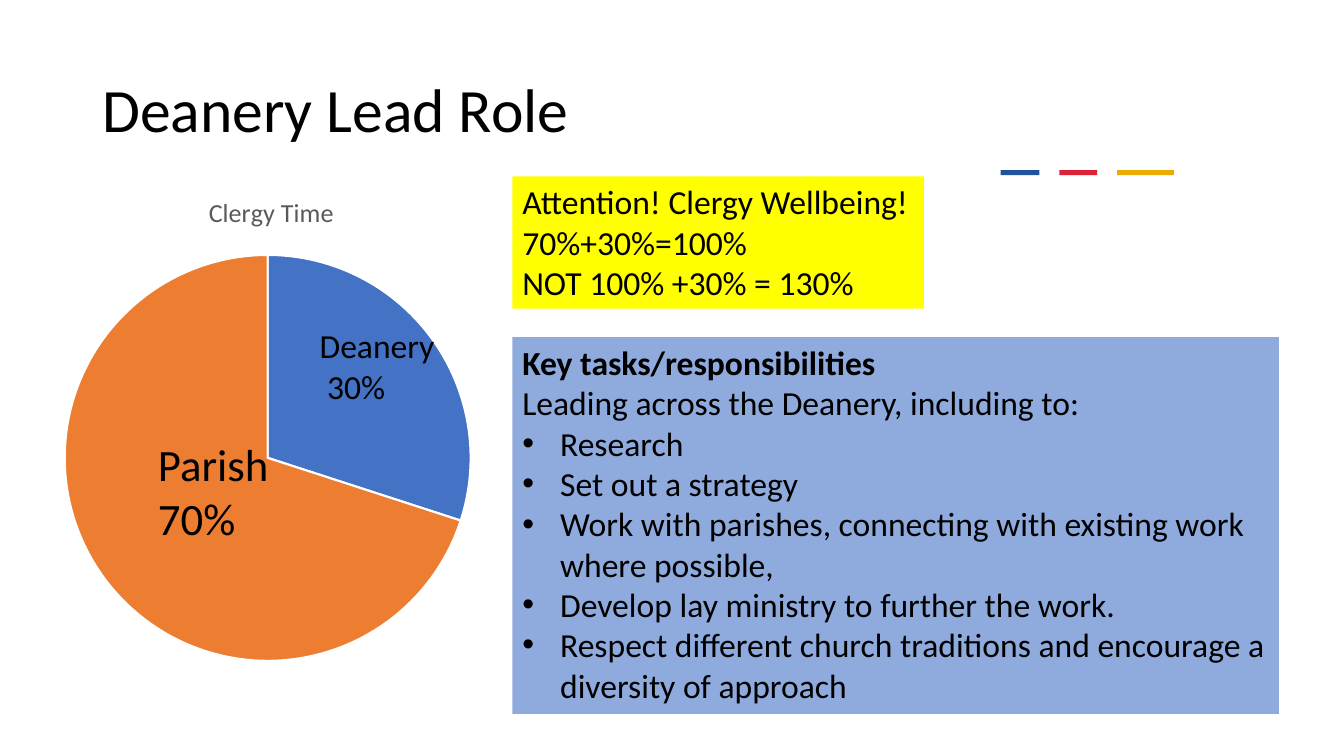
import pptx
import pptx.chart.data
import pptx.dml.color
import pptx.enum.chart
import pptx.enum.shapes
import pptx.enum.text
import pptx.oxml
import pptx.oxml.ns
import pptx.util

RGBColor = pptx.dml.color.RGBColor
BLACK = RGBColor(0x00, 0x00, 0x00)
WHITE = RGBColor(0xFF, 0xFF, 0xFF)
GREY = RGBColor(0x59, 0x59, 0x59)
NAVY = RGBColor(0x21, 0x53, 0x9D)
RED = RGBColor(0xDF, 0x21, 0x38)
GOLD = RGBColor(0xEA, 0xAC, 0x00)
BLUE = RGBColor(0x44, 0x72, 0xC4)
ORANGE = RGBColor(0xED, 0x7D, 0x31)
YELLOW = RGBColor(0xFF, 0xFF, 0x00)
PALE_BLUE = RGBColor(0x8F, 0xAA, 0xDC)

FONT = "Calibri"
EMU_PER_PX = 9525  # 96 px to the inch
BULLET_INDENT = 36

ATTENTION = ["Attention! Clergy Wellbeing!", "70%+30%=100%", "NOT 100% +30% = 130%"]
TASKS_INTRO = ["Key tasks/responsibilities", "Leading across the Deanery, including to:"]
TASKS = [
    "Research",
    "Set out a strategy",
    "Work with parishes, connecting with existing work where possible,",
    "Develop lay ministry to further the work.",
    "Respect different church traditions and encourage a diversity of approach",
]


def px(length):
    return pptx.util.Emu(length * EMU_PER_PX)


def style_font(font, size, color=BLACK):
    font.name = FONT
    font.size = pptx.util.Pt(size)
    font.color.rgb = color


def add_bar(page, left, width, color):
    bar = page.shapes.add_shape(
        pptx.enum.shapes.MSO_SHAPE.RECTANGLE, px(left), px(162), px(width), px(5))
    bar.shadow.inherit = False
    bar.fill.solid()
    bar.fill.fore_color.rgb = color
    bar.line.fill.background()


def add_text(page, area, lines, size, fill=None, wrap=False):
    box = page.shapes.add_textbox(*map(px, area))
    if fill is not None:
        box.fill.solid()
        box.fill.fore_color.rgb = fill
    frame = box.text_frame
    frame.word_wrap = wrap
    frame.auto_size = pptx.enum.text.MSO_AUTO_SIZE.SHAPE_TO_FIT_TEXT
    frame.text = "\n".join(lines)
    for para in frame.paragraphs:
        for span in para.runs:
            style_font(span.font, size)
    return frame


def add_bullet(para):
    properties = para._p.get_or_add_pPr()
    properties.set("marL", str(px(BULLET_INDENT)))
    properties.set("indent", str(-px(BULLET_INDENT)))
    for tag, name, value in (("buFont", "typeface", "Arial"), ("buChar", "char", "•")):
        properties.append(pptx.oxml.parse_xml(
            f'<a:{tag} {pptx.oxml.ns.nsdecls("a")} {name}="{value}"/>'))


def add_title(page, text):
    frame = add_text(page, (88, 38, 1104, 139), [text], 44, wrap=True)
    frame.auto_size = pptx.enum.text.MSO_AUTO_SIZE.NONE
    frame.vertical_anchor = pptx.enum.text.MSO_ANCHOR.MIDDLE
    frame.paragraphs[0].line_spacing = 0.9


def place_plot(chart, x, y, w, h):
    plot_area = chart._chartSpace.chart.plotArea
    for old in plot_area.findall(pptx.oxml.ns.qn("c:layout")):
        plot_area.remove(old)
    plot_area.insert(0, pptx.oxml.parse_xml(
        f'<c:layout {pptx.oxml.ns.nsdecls("c")}><c:manualLayout>'
        '<c:layoutTarget val="inner"/><c:xMode val="edge"/><c:yMode val="edge"/>'
        f'<c:x val="{x}"/><c:y val="{y}"/><c:w val="{w}"/><c:h val="{h}"/>'
        '</c:manualLayout></c:layout>'))


def add_pie(page, area, title, values, colors):
    data = pptx.chart.data.CategoryChartData()
    data.categories = [str(number + 1) for number in range(len(values))]
    data.add_series(title, values)
    chart = page.shapes.add_chart(
        pptx.enum.chart.XL_CHART_TYPE.PIE, *map(px, area), data).chart
    style_font(chart.font, 10)
    chart.has_legend = False
    chart.has_title = True
    chart.chart_title.text_frame.text = title
    title_font = chart.chart_title.text_frame.paragraphs[0].runs[0].font
    style_font(title_font, 18.6, GREY)
    title_font.bold = False
    chart.chart_title.include_in_layout = False
    place_plot(chart, 0.22, 0.16, 0.55, 0.82)
    plot = chart.plots[0]
    plot.vary_by_categories = True
    for index, color in enumerate(colors):
        slice_format = plot.series[0].points[index].format
        slice_format.fill.solid()
        slice_format.fill.fore_color.rgb = color
        slice_format.line.color.rgb = WHITE
        slice_format.line.width = pptx.util.Pt(1.5)


def main():
    deck = pptx.Presentation()
    deck.slide_width, deck.slide_height = px(1280), px(720)
    page = deck.slides.add_slide(deck.slide_layouts[6])

    # Heading and accent bars
    for left, width, color in ((953, 37, NAVY), (1009, 36, RED), (1064, 54, GOLD)):
        add_bar(page, left, width, color)
    add_title(page, "Deanery Lead Role")

    # Clergy time pie with its labels
    add_pie(page, (-93, 166, 703, 474), "Clergy Time", (30, 70), (BLUE, ORANGE))
    add_text(page, (295, 305, 131, 87), ["Deanery", " 30%"], 24)
    add_text(page, (141, 411, 126, 113), ["Parish", "70%"], 32)

    # Wellbeing warning and key tasks
    add_text(page, (488, 168, 392, 126), ATTENTION, 24, YELLOW)
    tasks = add_text(page, (488, 321, 730, 359), TASKS_INTRO + TASKS, 24, PALE_BLUE, True)
    tasks.paragraphs[0].runs[0].font.bold = True
    for para in tasks.paragraphs[len(TASKS_INTRO):]:
        add_bullet(para)

    deck.save("out.pptx")


if __name__ == "__main__":
    main()
